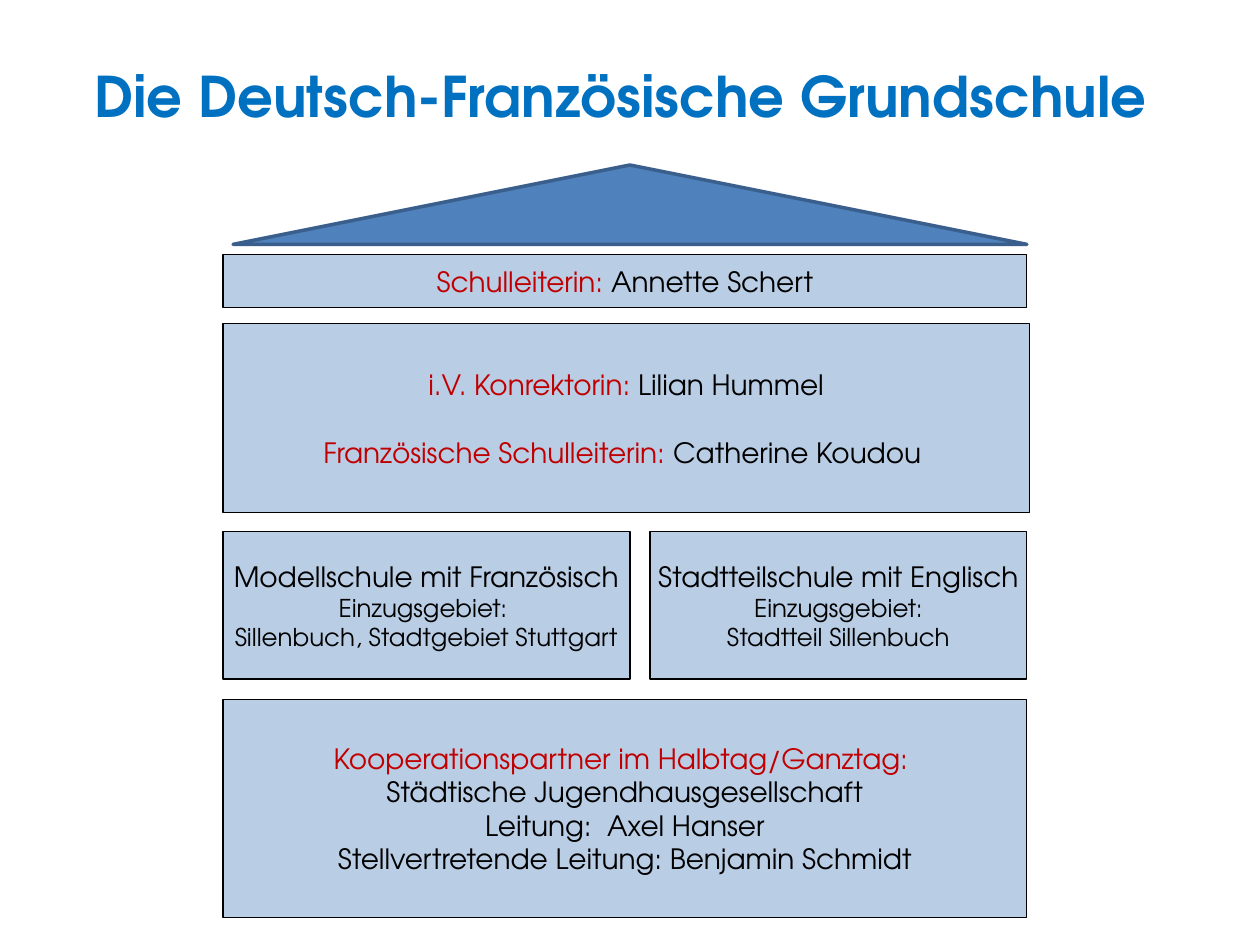
import pptx
import pptx.util
import pptx.dml.color
import pptx.enum.shapes
import pptx.enum.text

Inches = pptx.util.Inches
Pt = pptx.util.Pt
RGBColor = pptx.dml.color.RGBColor
Shape = pptx.enum.shapes.MSO_SHAPE
CENTER = pptx.enum.text.PP_ALIGN.CENTER
MIDDLE = pptx.enum.text.MSO_ANCHOR.MIDDLE

FONT = "TeX Gyre Adventor"
TITLE_BLUE = RGBColor(0x00, 0x70, 0xC0)
ROOF_BLUE = RGBColor(0x4F, 0x81, 0xBD)
ROOF_EDGE = RGBColor(0x3A, 0x5F, 0x8C)
WALL_BLUE = RGBColor(0xB9, 0xCD, 0xE5)
RED = RGBColor(0xC0, 0x00, 0x00)
BLACK = RGBColor(0x00, 0x00, 0x00)

LARGE, SMALL = Pt(16), Pt(14)
LEFT, WIDTH = 1.77, 6.38

ROOMS = [
    ((LEFT, 2.02, WIDTH, 0.42), 0,
     [[("Schulleiterin: ", LARGE, RED), ("Annette Schert", LARGE, BLACK)]]),
    ((LEFT, 2.57, 6.4, 1.5), 19.2,
     [[("i.V. Konrektorin: ", LARGE, RED), ("Lilian Hummel", LARGE, BLACK)],
      [("Französische Schulleiterin: ", LARGE, RED),
       ("Catherine Koudou ", LARGE, BLACK)]]),
    ((LEFT, 4.22, 3.23, 1.17), 0,
     [[("Modellschule mit Französisch", LARGE, BLACK)],
      [("Einzugsgebiet: ", SMALL, BLACK)],
      [("Sillenbuch, Stadtgebiet Stuttgart", SMALL, BLACK)]]),
    ((5.16, 4.22, 2.99, 1.17), 0,
     [[("Stadtteilschule mit Englisch", LARGE, BLACK)],
      [("Einzugsgebiet:", SMALL, BLACK)],
      [("Stadtteil Sillenbuch", SMALL, BLACK)]]),
    ((LEFT, 5.55, WIDTH, 1.73), 0,
     [[("Kooperationspartner im Halbtag/Ganztag: ", LARGE, RED)],
      [("Städtische Jugendhausgesellschaft", LARGE, BLACK)],
      [("Leitung:  Axel Hanser", LARGE, BLACK)],
      [("Stellvertretende Leitung: Benjamin Schmidt", LARGE, BLACK)]]),
]


def add_span(para, text, color, **font_values):
    """Add a run of text with the given colour and font values."""
    span = para.add_run()
    span.text = text
    for name, value in {"name": FONT, **font_values}.items():
        setattr(span.font, name, value)
    span.font.color.rgb = color


def add_block(page, kind, box, fill, edge, edge_width):
    """Add a filled and outlined preset shape in the given box."""
    block = page.shapes.add_shape(kind, *map(Inches, box))
    block.shadow.inherit = False
    block.fill.solid()
    block.fill.fore_color.rgb = fill
    block.line.color.rgb = edge
    block.line.width = Pt(edge_width)
    return block


def fill_title(page, box):
    """Place and format the title placeholder."""
    title = page.shapes.title
    for name, value in zip(("left", "top", "width", "height"), box):
        setattr(title, name, Inches(value))
    title.text_frame.vertical_anchor = MIDDLE
    para = title.text_frame.paragraphs[0]
    para.alignment = CENTER
    add_span(para, "Die Deutsch-Französische Grundschule ", TITLE_BLUE,
             size=Pt(32), bold=True)


def add_room(page, box, gap, lines):
    """Add a room of the house with centred lines, gap points apart."""
    room = add_block(page, Shape.RECTANGLE, box, WALL_BLUE, BLACK, 0.75)
    frame = room.text_frame
    frame.word_wrap = False
    frame.vertical_anchor = MIDDLE
    for index, line in enumerate(lines):
        para = frame.add_paragraph() if index else frame.paragraphs[0]
        para.alignment = CENTER
        if index and gap:
            para.space_before = Pt(gap)
        for text, size, color in line:
            add_span(para, text, color, size=size)


def main():
    """Build the slide and save the deck."""
    deck = pptx.Presentation()
    deck.slide_width, deck.slide_height = Inches(10), Inches(7.5)
    page = deck.slides.add_slide(deck.slide_layouts.get_by_name("Title Only"))
    fill_title(page, (0.2, 0.13, 9.58, 1.25))
    for box, gap, lines in ROOMS:
        add_room(page, box, gap, lines)
    add_block(page, Shape.ISOSCELES_TRIANGLE, (1.85, 1.31, 6.3, 0.63),
              ROOF_BLUE, ROOF_EDGE, 2)
    deck.save("out.pptx")


if __name__ == "__main__":
    main()
